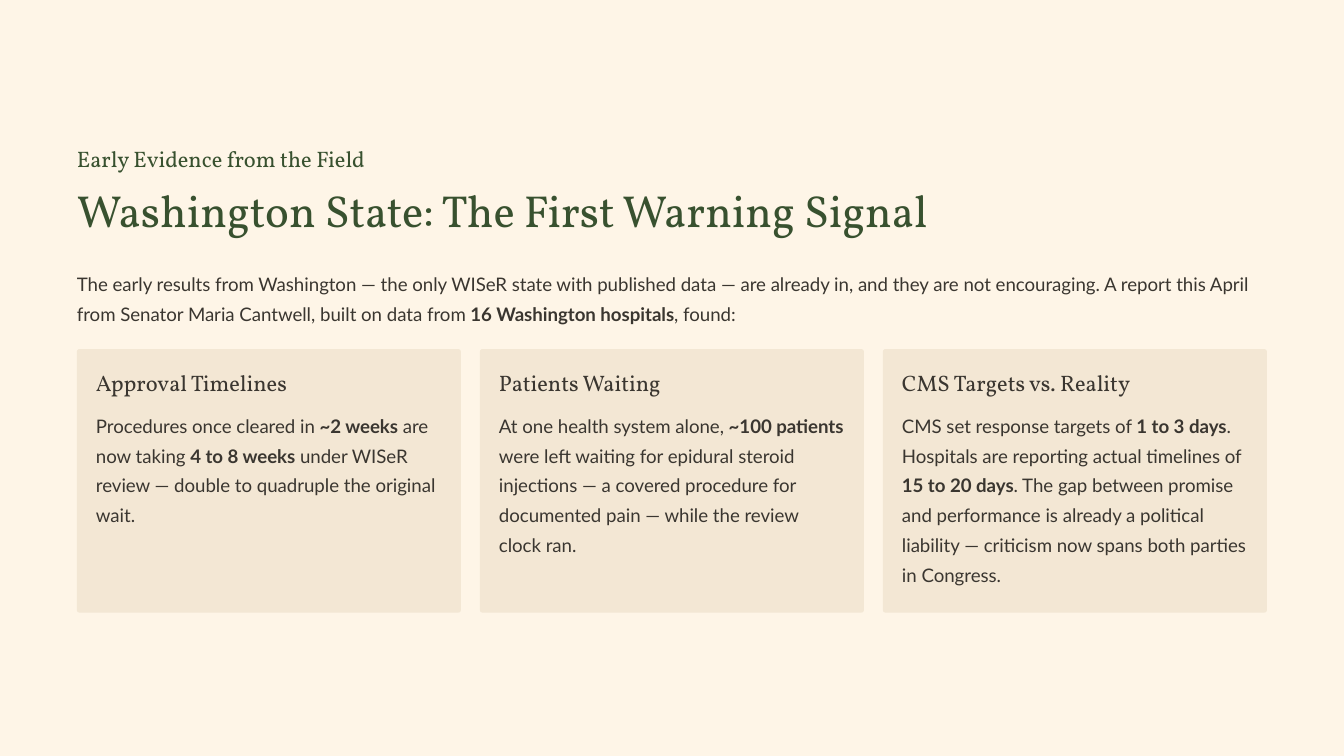
from pptx import Presentation
from pptx.dml.color import RGBColor
from pptx.enum.shapes import MSO_SHAPE
from pptx.enum.text import MSO_ANCHOR, MSO_AUTO_SIZE, PP_ALIGN
from pptx.util import Pt

ROUND = MSO_SHAPE.ROUNDED_RECTANGLE
TOP = MSO_ANCHOR.TOP
FIXED = MSO_AUTO_SIZE.NONE
LEFT = PP_ALIGN.LEFT

HEX = {"page": "FEF5E7", "card": "F3E7D4", "green": "38512F", "ink": "3A3630"}
SERIF, SANS = "Vollkorn", "Lato"

EDGE, WIDE = 41.2, 637.5
GAP = PAD = 10.2
CARD_TOP, CARD_TALL = 187, 141.2

INTRO = (
    "The early results from Washington — the only WISeR state with published data — "
    "are already in, and they are not encouraging. A report this April from "
    "Senator Maria Cantwell, built on data from **16 Washington hospitals**, found:"
)
CARDS = [
    ("Approval Timelines",
     "Procedures once cleared in **~2 weeks** are now taking **4 to 8 weeks** "
     "under WISeR review — double to quadruple the original wait."),
    ("Patients Waiting",
     "At one health system alone, **~100 patients** were left waiting for epidural "
     "steroid injections — a covered procedure for documented pain — while the "
     "review clock ran."),
    ("CMS Targets vs. Reality",
     "CMS set response targets of **1 to 3 days**. Hospitals are reporting actual "
     "timelines of **15 to 20 days**. The gap between promise and performance is "
     "already a political liability — criticism now spans both parties in Congress."),
]


def color(name):
    return RGBColor.from_string(HEX[name])


def place(shape, x, y, w, h):
    shape.left, shape.top, shape.width, shape.height = Pt(x), Pt(y), Pt(w), Pt(h)


def write(shape, text, size, face, tone, lead):
    frame = shape.text_frame
    frame.margin_left = frame.margin_right = 0
    frame.margin_top = frame.margin_bottom = 0
    frame.word_wrap = True
    frame.auto_size = FIXED
    frame.vertical_anchor = TOP
    para = frame.paragraphs[0]
    para.alignment = LEFT
    para.line_spacing = lead
    for i, part in enumerate(text.split("**")):
        run = para.add_run()
        run.text = part
        run.font.size = Pt(size)
        run.font.name = face
        run.font.bold = i % 2 == 1
        run.font.color.rgb = color(tone)


def add_box(slide, x, y, w, h):
    return slide.shapes.add_textbox(Pt(x), Pt(y), Pt(w), Pt(h))


def add_head(slide, text, x, y, w, tone):
    write(add_box(slide, x, y, w, 15), text, 12, SERIF, tone, 1.04)


def add_body(slide, text, x, y, w, h):
    write(add_box(slide, x, y, w, h), text, 10, SANS, "ink", 1.33)


def add_title(slide, text):
    title = slide.shapes.title
    place(title, EDGE, 96.5, WIDE, 30)
    write(title, text, 24, SERIF, "green", 1.04)


def add_card(slide, x, w, head, body):
    card = slide.shapes.add_shape(ROUND, Pt(x), Pt(CARD_TOP), Pt(w), Pt(CARD_TALL))
    card.adjustments[0] = 0.01
    card.shadow.inherit = False
    card.fill.solid()
    card.fill.fore_color.rgb = color("card")
    card.line.fill.background()
    inner = w - 2 * PAD
    add_head(slide, head, x + PAD, CARD_TOP + PAD, inner, "ink")
    add_body(slide, body, x + PAD, CARD_TOP + 31.2, inner, 99)


def main():
    deck = Presentation()
    deck.slide_width, deck.slide_height = Pt(720), Pt(405)
    slide = deck.slides.add_slide(deck.slide_layouts[5])
    slide.background.fill.solid()
    slide.background.fill.fore_color.rgb = color("page")

    add_head(slide, "Early Evidence from the Field", EDGE, 77, WIDE, "green")
    add_title(slide, "Washington State: The First Warning Signal")
    add_body(slide, INTRO, EDGE, 142.5, WIDE, 33)

    count = len(CARDS)
    w = (WIDE - GAP * (count - 1)) / count
    for i, (head, body) in enumerate(CARDS):
        add_card(slide, EDGE + i * (w + GAP), w, head, body)

    deck.save("out.pptx")


if __name__ == "__main__":
    main()
